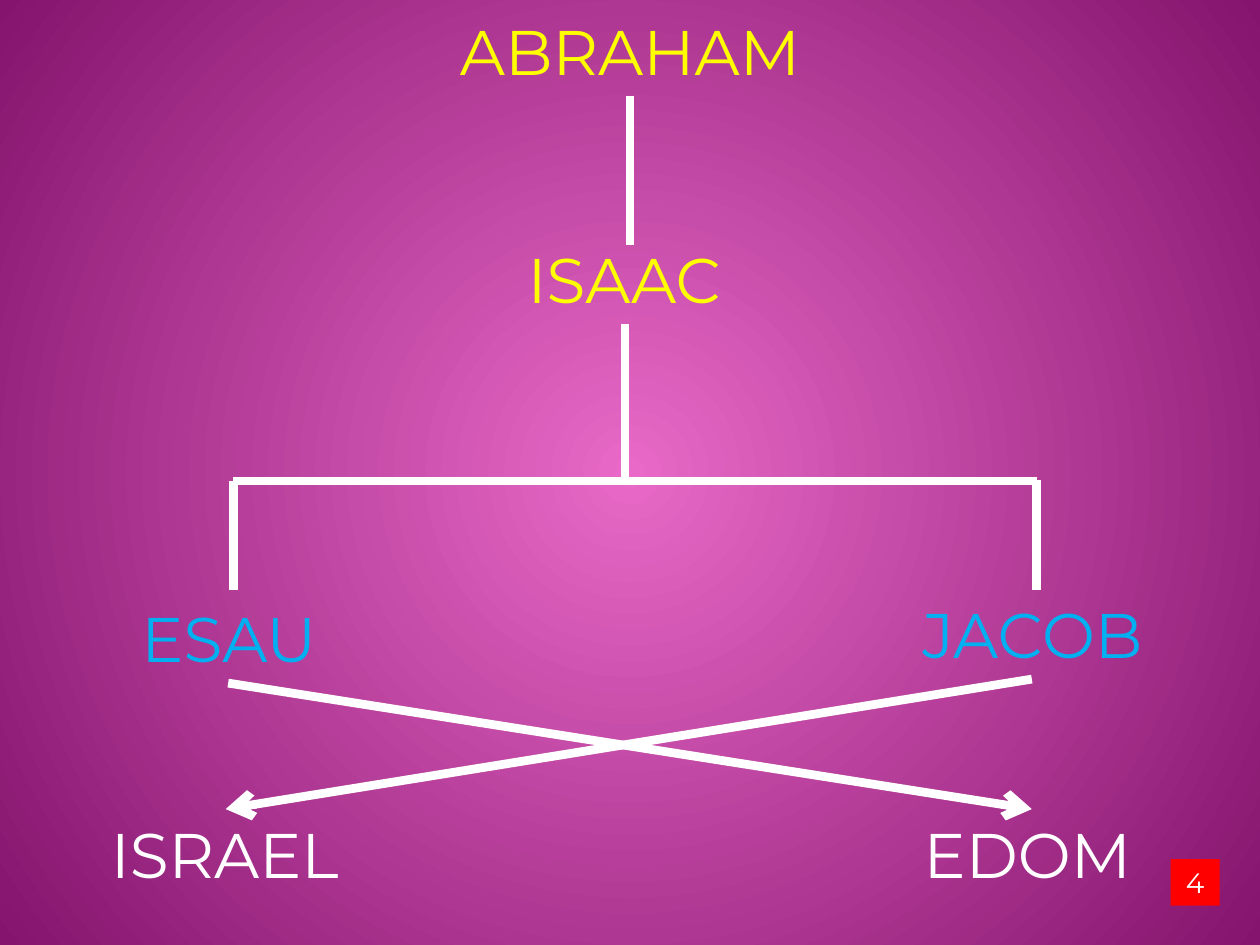
from lxml.etree import SubElement
from pptx import Presentation
from pptx.dml.color import RGBColor
from pptx.enum.shapes import MSO_CONNECTOR, MSO_SHAPE
from pptx.enum.text import MSO_ANCHOR, PP_ALIGN
from pptx.oxml.ns import qn
from pptx.util import Cm, Pt

COLOURS = {
    "glow": "E869C7",
    "edge": "84146D",
    "patriarch": "FFFF00",
    "twin": "00B0F0",
    "white": "FFFFFF",
    "badge": "FF0000",
}
FONT = "Montserrat"
NAME_HEIGHT = 1.8

NAMES = [
    ("ABRAHAM", 0, 0.13, 25.4, "patriarch"),
    ("ISAAC", 7.39, 4.72, 10.39, "patriarch"),
    ("ESAU", 0.41, 11.96, 8.41, "twin"),
    ("JACOB", 16.61, 11.89, 8.41, "twin"),
    ("ISRAEL", 0.2, 16.31, 8.66, "white"),
    ("EDOM", 16.38, 16.31, 8.66, "white"),
]
ESAU_X, JACOB_X, FORK_Y, TWINS_Y = 4.7, 20.9, 9.7, 11.89
DESCENT = [(12.7, 1.93, 12.7, 4.93), (12.6, 6.53, 12.6, FORK_Y)]
FORK = [
    (ESAU_X, FORK_Y, JACOB_X, FORK_Y),
    (ESAU_X, FORK_Y, ESAU_X, TWINS_Y),
    (JACOB_X, FORK_Y - 0.02, JACOB_X, TWINS_Y),
]
NATIONS = [(20.8, 13.69, 4.55, 16.31), (4.6, 13.77, 20.8, 16.31)]
PAGE_NUMBER = ("4", 23.6, 17.32, 0.99, 0.94)


def colour(name):
    return RGBColor.from_string(COLOURS[name])


def paint_background(page):
    fill = page.background.fill
    fill.gradient()
    for stop, name, position in zip(fill.gradient_stops, ("glow", "edge"), (0, 1)):
        stop.color.rgb = colour(name)
        stop.position = position
    gradient = page.element.find(".//" + qn("a:gradFill"))
    gradient.remove(gradient.find(qn("a:lin")))
    circle = SubElement(gradient, qn("a:path"), {"path": "circle"})
    SubElement(circle, qn("a:fillToRect"), dict.fromkeys("ltrb", "50000"))


def write(box, text, size, name):
    para = box.text_frame.paragraphs[0]
    para.alignment = PP_ALIGN.CENTER
    span = para.add_run()
    span.text = text
    span.font.name = FONT
    span.font.size = Pt(size)
    span.font.color.rgb = colour(name)


def add_name(page, text, left, top, width, name):
    box = page.shapes.add_textbox(Cm(left), Cm(top), Cm(width), Cm(NAME_HEIGHT))
    box.text_frame.word_wrap = True
    write(box, text, 36, name)


def add_line(shapes, ends, arrow=False):
    line = shapes.add_connector(MSO_CONNECTOR.STRAIGHT, *map(Cm, ends))
    line.line.width = Pt(5)
    line.line.color.rgb = colour("white")
    properties = line.element.spPr
    if arrow:
        SubElement(properties.find(qn("a:ln")), qn("a:tailEnd"), {"type": "arrow"})
    SubElement(properties, qn("a:effectLst"))


def add_page_number(page, text, *place):
    badge = page.shapes.add_shape(MSO_SHAPE.RECTANGLE, *map(Cm, place))
    badge.shadow.inherit = False
    badge.fill.solid()
    badge.fill.fore_color.rgb = colour("badge")
    badge.line.fill.background()
    badge.text_frame.word_wrap = False
    badge.text_frame.vertical_anchor = MSO_ANCHOR.MIDDLE
    write(badge, text, 16, "white")


def main():
    deck = Presentation()
    deck.slide_width, deck.slide_height = Cm(25.4), Cm(19.05)
    page = deck.slides.add_slide(deck.slide_layouts.get_by_name("Blank"))
    paint_background(page)
    for entry in NAMES:
        add_name(page, *entry)
    for ends in DESCENT:
        add_line(page.shapes, ends)
    fork = page.shapes.add_group_shape()
    for ends in FORK:
        add_line(fork.shapes, ends)
    for ends in NATIONS:
        add_line(page.shapes, ends, arrow=True)
    add_page_number(page, *PAGE_NUMBER)
    deck.save("out.pptx")


if __name__ == "__main__":
    main()
